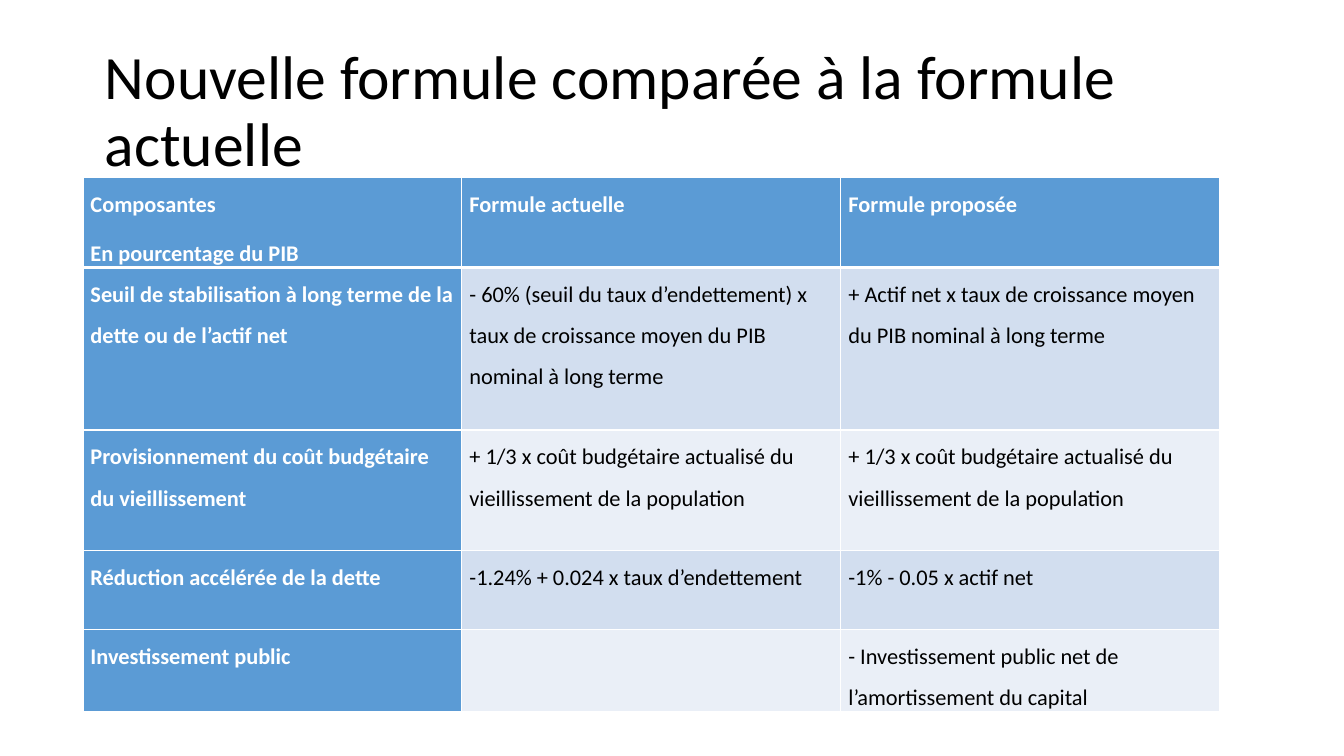
"""Build a slide that compares the new budget formula with the current one."""
from dataclasses import dataclass

from lxml.etree import SubElement
from pptx import Presentation
from pptx.dml.color import RGBColor as Color
from pptx.enum.text import MSO_ANCHOR as Anchor, MSO_AUTO_SIZE as AutoSize, PP_ALIGN as Align
from pptx.oxml.ns import qn
from pptx.util import Cm, Pt


@dataclass(frozen=True)
class Theme:
    font: str = "Calibri"
    title_size: int = 44
    table_size: int = 16
    black: str = "000000"
    white: str = "FFFFFF"
    accent: str = "5B9BD5"
    bands: tuple = ("EAEFF7", "D2DEEF")


theme = Theme()


def write(frame, text, size=theme.table_size, color=theme.black, bold=False,
          align=Align.LEFT, spacing=1.5, before=6):
    """Fill a text frame with one formatted paragraph per line of text."""
    for index, line in enumerate(text.split("\n")):
        para = frame.paragraphs[0] if index == 0 else frame.add_paragraph()
        para.alignment = align
        para.line_spacing = spacing
        para.space_before = Pt(before)
        span = para.add_run()
        span.text = line
        span.font.name = theme.font
        span.font.size = Pt(size)
        span.font.bold = bold
        span.font.color.rgb = Color.from_string(color)


def add_border(cell, side, width):
    """Draw one white edge of a table cell."""
    line = SubElement(cell._tc.get_or_add_tcPr(), qn(f"a:ln{side}"), w=str(Pt(width)))
    SubElement(SubElement(line, qn("a:solidFill")), qn("a:srgbClr"), val=theme.white)


deck = Presentation()
deck.slide_width, deck.slide_height = Cm(33.87), Cm(19.05)
page = deck.slides.add_slide(deck.slide_layouts.get_by_name("Title Only"))

title = page.shapes.title
title.left, title.top, title.width, title.height = Cm(2.39), Cm(1.01), Cm(29.21), Cm(3.68)
title.text_frame.vertical_anchor = Anchor.MIDDLE
title.text_frame.word_wrap = True
title.text_frame.auto_size = AutoSize.NONE
write(title.text_frame, "Nouvelle formule comparée à la formule actuelle",
      size=theme.title_size, spacing=0.9, before=0)

rows = [
    ("Composantes\nEn pourcentage du PIB", "Formule actuelle", "Formule proposée"),
    ("Seuil de stabilisation à long terme de la dette ou de l’actif net",
     "- 60% (seuil du taux d’endettement) x taux de croissance moyen du PIB nominal à long terme",
     "+ Actif net x taux de croissance moyen du PIB nominal à long terme"),
    ("Provisionnement du coût budgétaire du vieillissement",
     "+ 1/3 x coût budgétaire actualisé du vieillissement de la population",
     "+ 1/3 x coût budgétaire actualisé du vieillissement de la population"),
    ("Réduction accélérée de la dette",
     "-1.24% + 0.024 x taux d’endettement",
     "-1% - 0.05 x actif net"),
    ("Investissement public", "",
     "- Investissement public net de l’amortissement du capital"),
]
row_heights = [2.27, 4.09, 3.04, 1.99, 1.99]
column_width = 9.55

table = page.shapes.add_table(len(rows), 3, Cm(2.09), Cm(4.46),
                              Cm(3 * column_width), Cm(sum(row_heights))).table
for column in table.columns:
    column.width = Cm(column_width)

for row_index, (texts, height) in enumerate(zip(rows, row_heights)):
    table.rows[row_index].height = Cm(height)
    is_header = row_index == 0
    for column_index, text in enumerate(texts):
        cell = table.cell(row_index, column_index)
        is_label = is_header or column_index == 0
        cell.margin_left = cell.margin_right = Cm(0.19)
        cell.margin_top = cell.margin_bottom = Cm(0)
        for side in "LRTB":
            under_header = (row_index, side) in ((0, "B"), (1, "T"))
            add_border(cell, side, 3 if under_header else 1)
        cell.fill.solid()
        cell.fill.fore_color.rgb = Color.from_string(
            theme.accent if is_label else theme.bands[row_index % 2])
        if text:
            write(cell.text_frame, text, bold=is_label,
                  color=theme.white if is_label else theme.black,
                  align=Align.JUSTIFY if is_header else Align.LEFT)

deck.save("out.pptx")
